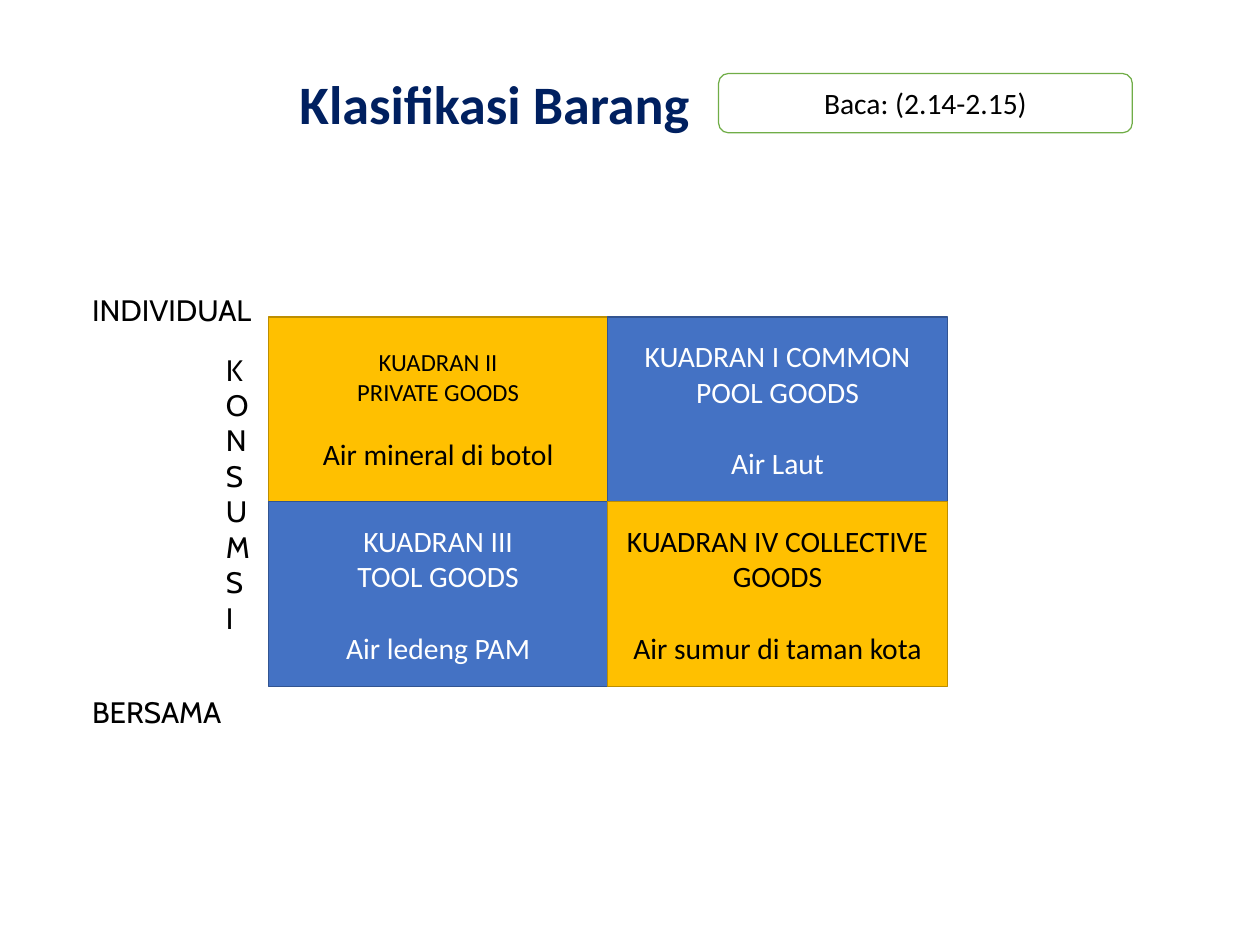
from dataclasses import dataclass

from pptx import Presentation
from pptx.dml.color import RGBColor
from pptx.enum.shapes import MSO_SHAPE
from pptx.enum.text import MSO_ANCHOR, MSO_AUTO_SIZE, PP_ALIGN
from pptx.util import Inches, Pt

RECT, ROUND = MSO_SHAPE.RECTANGLE, MSO_SHAPE.ROUNDED_RECTANGLE
TOP, MIDDLE = MSO_ANCHOR.TOP, MSO_ANCHOR.MIDDLE
LEFT, CENTER = PP_ALIGN.LEFT, PP_ALIGN.CENTER
NO_FIT = MSO_AUTO_SIZE.NONE


@dataclass(frozen=True)
class Theme:
    body: str = "Calibri"
    label: str = "Cabin"
    big: int = 44
    mid: int = 24
    small: int = 20
    edge: int = 1
    row: float = 1.22  # height of a text line as a share of its size
    navy: str = "002060"
    black: str = "000000"
    white: str = "FFFFFF"
    green: str = "70AD47"
    # fill, line and text colour of a cell
    gold: tuple = ("FFC000", "BD8E00", "000000")
    blue: tuple = ("4472C4", "325491", "FFFFFF")


THEME = Theme()

TITLE = "Klasifikasi Barang"
READING = "Baca: (2.14-2.15)"
# Grid of quadrants: heading lines, heading size, example
QUADS = [
    [(["KUADRAN II", "PRIVATE GOODS"], THEME.small, "Air mineral di botol"),
     (["KUADRAN I COMMON POOL GOODS"], THEME.mid, "Air Laut")],
    [(["KUADRAN III", "TOOL GOODS"], THEME.mid, "Air ledeng PAM"),
     (["KUADRAN IV COLLECTIVE GOODS"], THEME.mid, "Air sumur di taman kota")],
]
# Axis labels: text, box, wraps (the narrow box stacks its letters)
LABELS = [
    ("INDIVIDUAL", (0.94, 3.25, 2.09, 0.5), False),
    ("BERSAMA", (0.94, 7.79, 1.85, 0.5), False),
    ("KONSUMSI", (2.45, 3.92, 0.41, 3.33), True),
]

WIDE, HIGH = 14.22, 10.67
GRID_X, GRID_Y = 3.03, 3.58
CELL_W, CELL_H = 3.83, 2.085
TITLE_BOX = (3.28, 0.58, WIDE - 3.28, 1.25)
READ_BOX = (8.11, 0.83, 4.67, 0.67)


def color(code):
    return RGBColor.from_string(code)


def write(frame, text, size=THEME.mid, font=THEME.body, ink=THEME.black,
          bold=False, align=LEFT, anchor=TOP, wrap=True, gap=0, more=False):
    """Fill the first paragraph, or add one below when more is set."""
    frame.auto_size = NO_FIT
    frame.word_wrap = wrap
    frame.vertical_anchor = anchor
    para = frame.add_paragraph() if more else frame.paragraphs[0]
    para.alignment = align
    if gap:
        para.space_before = Pt(gap)
    run = para.add_run()
    run.text = text
    run.font.size = Pt(size)
    run.font.name = font
    run.font.bold = bold
    run.font.color.rgb = color(ink)
    return para


def panel(slide, kind, box, fill, line):
    shape = slide.shapes.add_shape(kind, *map(Inches, box))
    shape.shadow.inherit = False
    shape.fill.solid()
    shape.fill.fore_color.rgb = color(fill)
    shape.line.color.rgb = color(line)
    shape.line.width = Pt(THEME.edge)
    return shape.text_frame


def add_title(slide):
    title = slide.shapes.title
    title.left, title.top, title.width, title.height = map(Inches, TITLE_BOX)
    para = write(title.text_frame, TITLE, size=THEME.big, ink=THEME.navy,
                 bold=True, anchor=MIDDLE)
    para.line_spacing = 0.9


def add_quad(slide, row, col, quad):
    heads, size, example = quad
    fill, line, ink = THEME.blue if (row + col) % 2 else THEME.gold
    box = (GRID_X + col * CELL_W, GRID_Y + row * CELL_H, CELL_W, CELL_H)
    frame = panel(slide, RECT, box, fill, line)
    style = dict(ink=ink, align=CENTER, anchor=MIDDLE)
    for i, head in enumerate(heads):
        write(frame, head, size=size, more=i > 0, **style)
    write(frame, example, gap=size * THEME.row, more=True, **style)


def main():
    deck = Presentation()
    deck.slide_width, deck.slide_height = Inches(WIDE), Inches(HIGH)
    slide = deck.slides.add_slide(deck.slide_layouts[5])
    add_title(slide)
    for row, quads in enumerate(QUADS):
        for col, quad in enumerate(quads):
            add_quad(slide, row, col, quad)
    for text, box, wrap in LABELS:
        label = slide.shapes.add_textbox(*map(Inches, box))
        write(label.text_frame, text, font=THEME.label, wrap=wrap)
    frame = panel(slide, ROUND, READ_BOX, THEME.white, THEME.green)
    write(frame, READING, align=CENTER, anchor=MIDDLE)
    deck.save("out.pptx")


if __name__ == "__main__":
    main()
